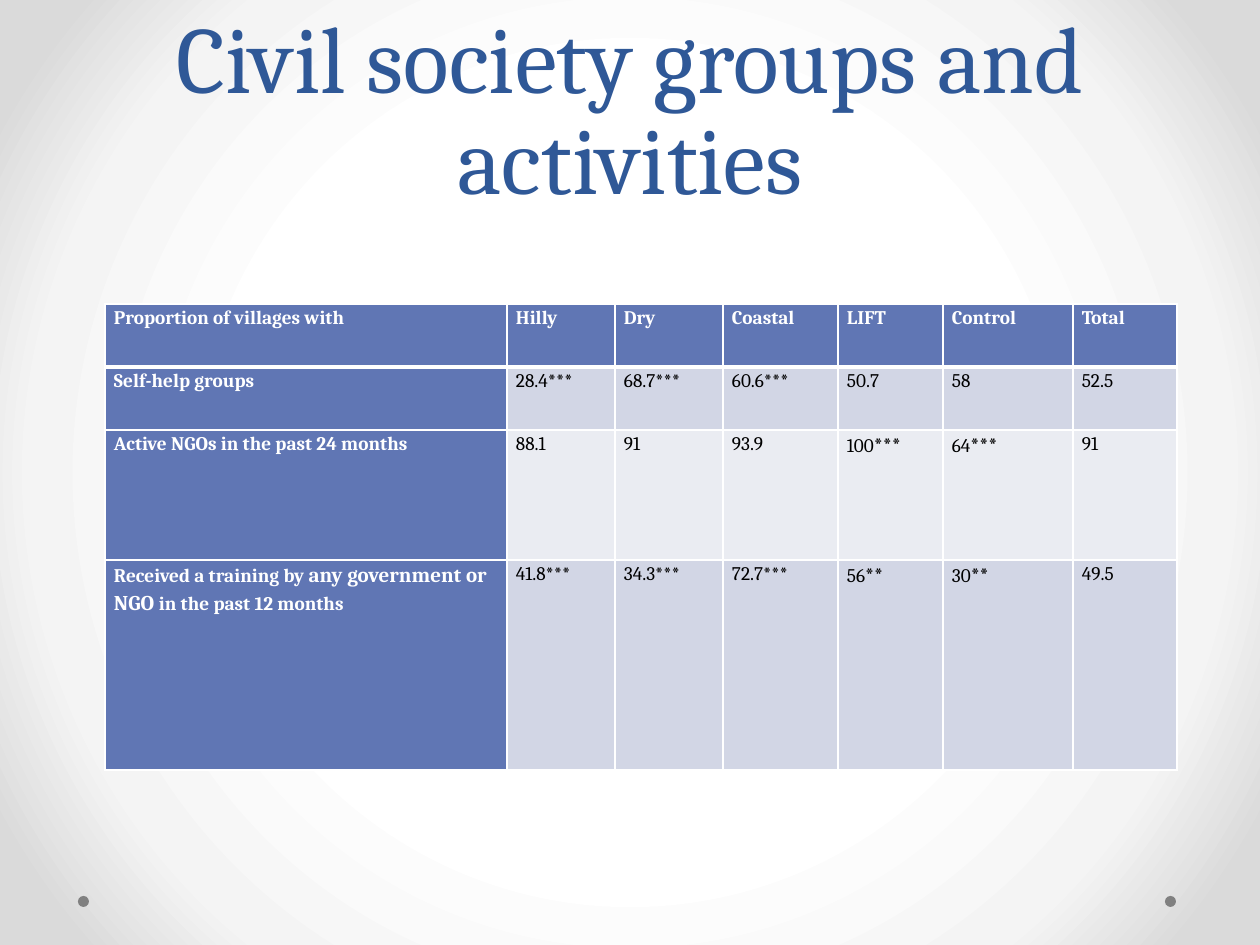
import pptx
import pptx.dml.color
import pptx.enum.shapes
import pptx.enum.text
import pptx.oxml.ns
import pptx.util
from lxml import etree

RGBColor = pptx.dml.color.RGBColor
Pt = pptx.util.Pt
qn = pptx.oxml.ns.qn

PX_PER_INCH = 126
FONT = "Cambria"
WHITE = RGBColor(0xFF, 0xFF, 0xFF)
BLACK = RGBColor(0, 0, 0)
TITLE_BLUE = RGBColor(0x2F, 0x58, 0x97)
HEADER_BLUE = RGBColor(0x60, 0x76, 0xB4)
BAND_DARK = RGBColor(0xD2, 0xD6, 0xE5)
BAND_LIGHT = RGBColor(0xEA, 0xEC, 0xF2)
DOT_GRAY = RGBColor(0x80, 0x80, 0x80)
GLOW_STOPS = [
    (50, WHITE),
    (76, RGBColor(0xF4, 0xF4, 0xF4)),
    (92, RGBColor(0xDA, 0xDA, 0xDA)),
]

COLUMN_WIDTHS = [402, 108, 108, 115, 105, 130, 104]
ROW_HEIGHTS = [63, 63, 130, 210]
# A cell is a string, or a list of (text, size) spans.
ROWS = [
    ["Proportion of villages with", "Hilly", "Dry", "Coastal", "LIFT", "Control", "Total"],
    ["Self-help groups", "28.4***", "68.7***", "60.6***", "50.7", "58", "52.5"],
    ["Active NGOs in the past 24 months", "88.1", "91", "93.9",
     [("100", 11), ("***", 12)], [("64", 11), ("***", 12)], "91"],
    [[("Received a training by ", 11), ("any government or NGO ", 12),
      ("in the past 12 months", 11)], "41.8***", "34.3***", "72.7***",
     [("56", 11), ("**", 12)], [("30", 11), ("**", 12)], "49.5"],
]


def px(length):
    return pptx.util.Emu(round(length * 914400 / PX_PER_INCH))


def add_span(para, text, size, color, bold=False):
    span = para.add_run()
    span.text = text
    span.font.name = FONT
    span.font.size = Pt(size)
    span.font.bold = bold
    span.font.color.rgb = color


def add_color(parent, color):
    etree.SubElement(parent, qn("a:srgbClr"), val=str(color))


def set_glow_background(page):
    """Fill the page with a gradient that darkens from the centre outwards."""
    page.background.fill.solid()
    properties = page.element.find(".//" + qn("p:bgPr"))
    gradient = etree.Element(qn("a:gradFill"), rotWithShape="1")
    stops = etree.SubElement(gradient, qn("a:gsLst"))
    for percent, color in GLOW_STOPS:
        add_color(etree.SubElement(stops, qn("a:gs"), pos=str(percent * 1000)), color)
    circle = etree.SubElement(gradient, qn("a:path"))
    circle.set("path", "circle")
    etree.SubElement(circle, qn("a:fillToRect"), l="50000", t="50000", r="50000", b="50000")
    properties.replace(properties.find(qn("a:solidFill")), gradient)


def add_dot(page, left, top, size):
    dot = page.shapes.add_shape(
        pptx.enum.shapes.MSO_SHAPE.OVAL, px(left), px(top), px(size), px(size))
    dot.shadow.inherit = False
    dot.fill.solid()
    dot.fill.fore_color.rgb = DOT_GRAY
    dot.line.fill.background()


def add_title(page, text):
    box = page.shapes.add_textbox(px(63), px(0), px(1134), px(220))
    frame = box.text_frame
    frame.word_wrap = True
    frame.vertical_anchor = pptx.enum.text.MSO_ANCHOR.BOTTOM
    para = frame.paragraphs[0]
    para.alignment = pptx.enum.text.PP_ALIGN.CENTER
    para.line_spacing = Pt(58)
    add_span(para, text, 54, TITLE_BLUE)


def set_borders(cell, widths):
    """Draw white borders; widths are points by side, in L, R, T, B order."""
    properties = cell._tc.get_or_add_tcPr()
    for index, (side, width) in enumerate(widths.items()):
        line = etree.Element(qn("a:ln" + side), w=str(Pt(width)))
        add_color(etree.SubElement(line, qn("a:solidFill")), WHITE)
        properties.insert(index, line)


def fill_cell(cell, content, row, column):
    is_heading = row == 0 or column == 0
    cell.margin_left = cell.margin_right = px(9)
    cell.margin_top = cell.margin_bottom = 0
    cell.fill.solid()
    band = BAND_DARK if row % 2 else BAND_LIGHT
    cell.fill.fore_color.rgb = HEADER_BLUE if is_heading else band
    set_borders(cell, {"L": 1, "R": 1, "T": 3 if row == 1 else 1, "B": 3 if row == 0 else 1})

    para = cell.text_frame.paragraphs[0]
    para.line_spacing = 1.15
    if row == 0 or column > 0:
        para.space_before = para.space_after = Pt(6)
    spans = [(content, 11)] if isinstance(content, str) else content
    for text, size in spans:
        add_span(para, text, size, WHITE if is_heading else BLACK, is_heading)


def add_village_table(page):
    table = page.shapes.add_table(
        len(ROWS), len(COLUMN_WIDTHS), px(105), px(304),
        px(sum(COLUMN_WIDTHS)), px(sum(ROW_HEIGHTS))).table
    table.first_col = True
    for column, width in zip(table.columns, COLUMN_WIDTHS):
        column.width = px(width)
    for row, height in zip(table.rows, ROW_HEIGHTS):
        row.height = px(height)
    for row, contents in enumerate(ROWS):
        for column, content in enumerate(contents):
            fill_cell(table.cell(row, column), content, row, column)


def main():
    deck = pptx.Presentation()
    deck.slide_width, deck.slide_height = px(1260), px(945)
    page = deck.slides.add_slide(deck.slide_layouts[6])
    set_glow_background(page)
    for left in (1165, 78):
        add_dot(page, left, 896, 11)
    add_title(page, "Civil society groups and activities")
    add_village_table(page)
    deck.save("out.pptx")


if __name__ == "__main__":
    main()
